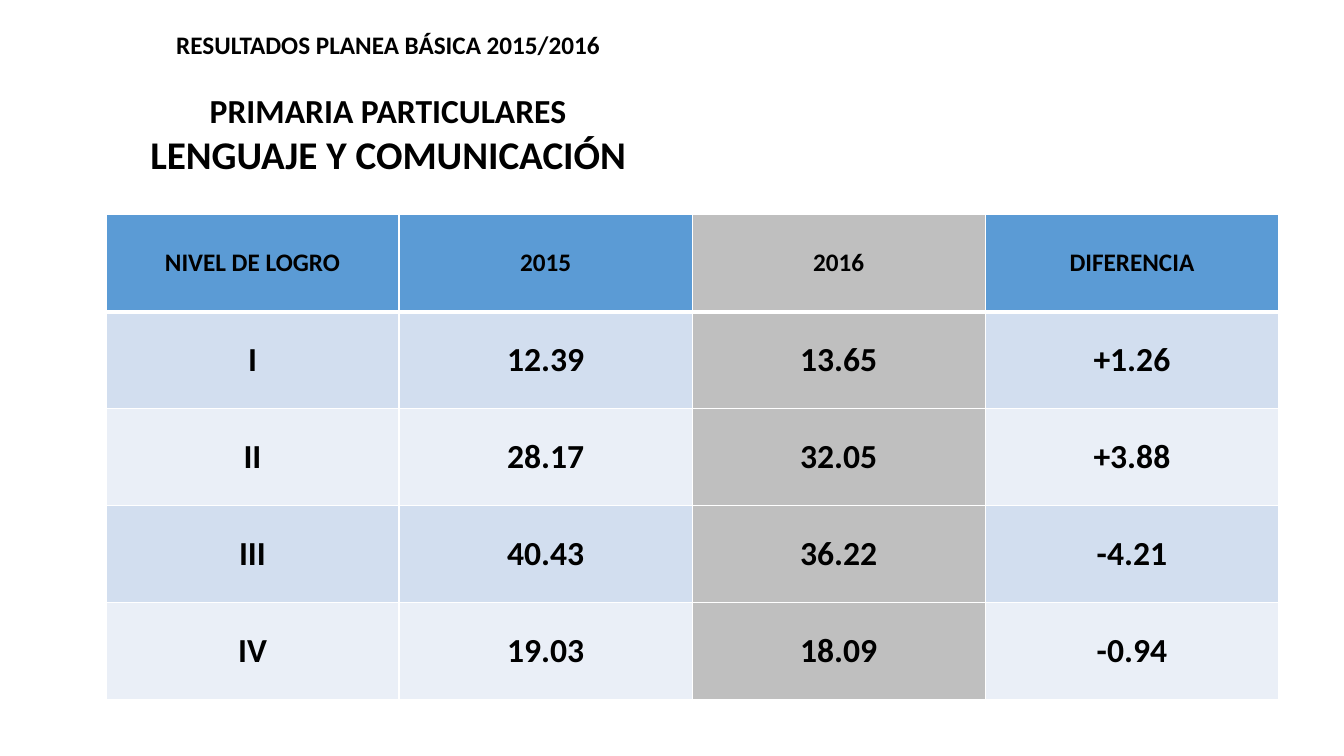
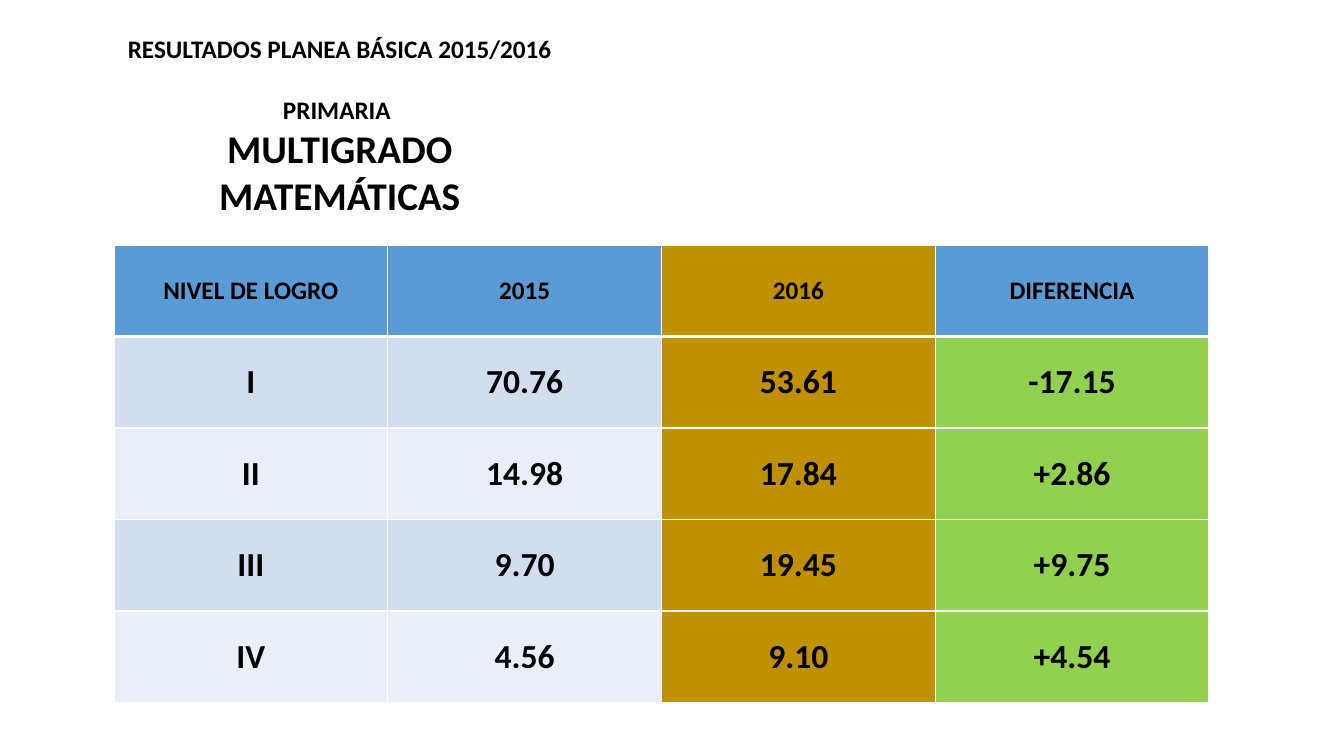
from lxml import etree
from pptx import Presentation
from pptx.dml.color import RGBColor
from pptx.enum.text import MSO_ANCHOR, PP_ALIGN
from pptx.oxml.ns import qn
from pptx.util import Inches, Pt

CENTER = PP_ALIGN.CENTER
MIDDLE = MSO_ANCHOR.MIDDLE

# Shared style
FONT = "Calibri"
BLACK, WHITE = "000000", "FFFFFF"
HEADER_BLUE = "5B9BD5"
BANDS = ("D2DEEF", "EAEFF7")
GRAY, GOLD, GREEN = "BFBFBF", "BF9000", "92D050"
SMALL, MEDIUM, LARGE = 18, 24, 28
THIN, THICK = 1, 3

# Shared wording
REPORT_TITLE = "RESULTADOS PLANEA BÁSICA 2015/2016"
HEADINGS = ("NIVEL DE LOGRO", "2015", "2016", "DIFERENCIA")
LEVELS = ("I", "II", "III", "IV")

# Boxes are left, top, width, height in percent of the slide
RESULTS = [
    {
        "title_box": (7.88, 3.2, 42, 21.07),
        "subtitle": [("PRIMARIA PARTICULARES", MEDIUM), ("LENGUAJE Y COMUNICACIÓN", LARGE)],
        "table_box": (7.88, 28.4, 87.25, 64.13),
        "scores": [(12.39, 13.65), (28.17, 32.05), (40.43, 36.22), (19.03, 18.09)],
        "current_color": GRAY,
        "change_color": None,
    },
    {
        "title_box": (4.28, 3.73, 42, 26),
        "subtitle": [("PRIMARIA ", SMALL), ("MULTIGRADO", LARGE), ("MATEMÁTICAS", LARGE)],
        "table_box": (8.48, 32.4, 81.47, 60.53),
        "scores": [(70.76, 53.61), (14.98, 17.84), (9.70, 19.45), (4.56, 9.10)],
        "current_color": GOLD,
        "change_color": GREEN,
    },
]


def color(value):
    return RGBColor.from_string(value)


def place(deck, box):
    """Turn a box in percent into slide lengths."""
    sizes = (deck.slide_width, deck.slide_height) * 2
    return [int(size * share / 100) for size, share in zip(sizes, box)]


def add_span(para, text, size):
    para.alignment = CENTER
    span = para.add_run()
    span.text = text
    span.font.name = FONT
    span.font.size = Pt(size)
    span.font.bold = True
    span.font.color.rgb = color(BLACK)


def add_borders(cell, top, bottom):
    properties = cell._tc.get_or_add_tcPr()
    widths = {"a:lnL": THIN, "a:lnR": THIN, "a:lnT": top, "a:lnB": bottom}
    for side, width in widths.items():
        line = etree.SubElement(properties, qn(side), w=str(Pt(width)))
        fill = etree.SubElement(line, qn("a:solidFill"))
        etree.SubElement(fill, qn("a:srgbClr"), val=WHITE)


def add_title(deck, page, box, subtitle):
    frame = page.shapes.add_textbox(*place(deck, box)).text_frame
    frame.word_wrap = True
    add_span(frame.paragraphs[0], REPORT_TITLE, SMALL)
    for index, (text, size) in enumerate(subtitle):
        para = frame.add_paragraph()
        if index == 0:
            para.space_before = Pt(22)
        add_span(para, text, size)


def add_results_table(deck, page, box, scores, current_color, change_color):
    rows = [HEADINGS]
    for level, (before, after) in zip(LEVELS, scores):
        rows.append((level, f"{before:.2f}", f"{after:.2f}", f"{after - before:+.2f}"))
    left, top, width, height = place(deck, box)
    table = page.shapes.add_table(len(rows), len(HEADINGS), left, top, width, height).table
    table.horz_banding = False

    for row_index, row in enumerate(rows):
        is_header = row_index == 0
        base = HEADER_BLUE if is_header else BANDS[(row_index - 1) % 2]
        last = base if is_header else change_color or base
        fills = (base, base, current_color, last)
        for column_index, (text, fill) in enumerate(zip(row, fills)):
            cell = table.cell(row_index, column_index)
            add_borders(cell, THICK if row_index == 1 else THIN, THICK if is_header else THIN)
            cell.fill.solid()
            cell.fill.fore_color.rgb = color(fill)
            cell.vertical_anchor = MIDDLE
            add_span(cell.text_frame.paragraphs[0], text, SMALL if is_header else MEDIUM)


def add_results_page(deck, result):
    page = deck.slides.add_slide(deck.slide_layouts[6])
    add_results_table(deck, page, result["table_box"], result["scores"],
                      result["current_color"], result["change_color"])
    add_title(deck, page, result["title_box"], result["subtitle"])


def main():
    deck = Presentation()
    deck.slide_width, deck.slide_height = Inches(13.33), Inches(7.5)
    for result in RESULTS:
        add_results_page(deck, result)
    deck.save("out.pptx")


if __name__ == "__main__":
    main()
